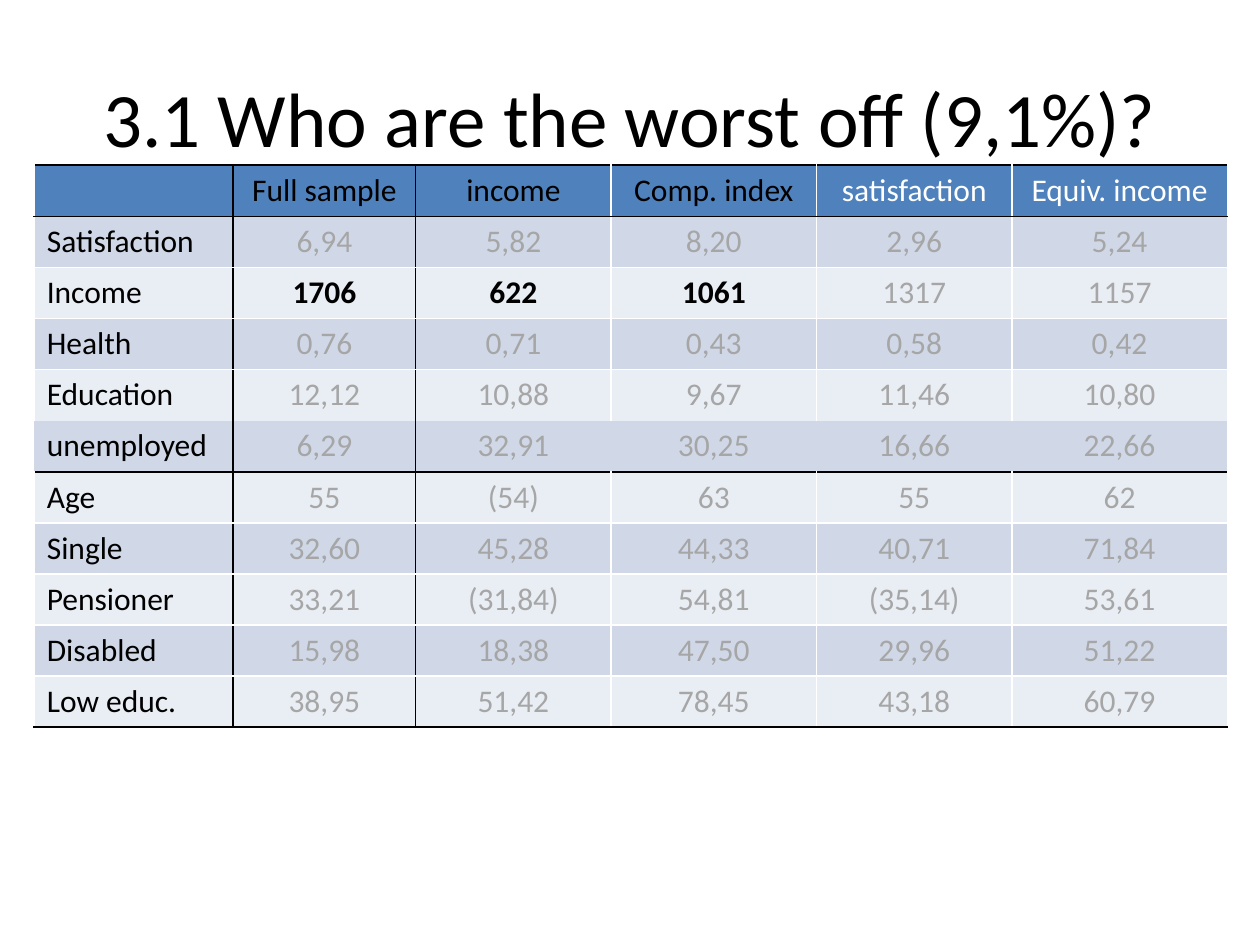
from lxml import etree
from pptx import Presentation
from pptx import util as u
from pptx.dml.color import RGBColor
from pptx.enum import text
from pptx.oxml.ns import qn


class Theme:
    font = "Calibri"
    title_size, cell_size, line_width = u.Pt(44), u.Pt(18), u.Pt(1)
    black, white, muted = "000000", "FFFFFF", "A6A6A6"
    header, bands = "4F81BD", ("E9EDF4", "D0D8E8")


def format_text(p, size, color, align, bold=False):
    p.alignment = align
    for r in p.runs:
        r.font.name, r.font.size, r.font.bold = Theme.font, size, bold
        r.font.color.rgb = RGBColor.from_string(color)


def add_border(cell, side, color):
    ln = etree.SubElement(cell._tc.get_or_add_tcPr(), qn(f"a:ln{side}"), w=str(Theme.line_width))
    if color is None:
        etree.SubElement(ln, qn("a:noFill"))
    else:
        fill = etree.SubElement(ln, qn("a:solidFill"))
        etree.SubElement(fill, qn("a:srgbClr"), val=color)


rows = [
    ("", "Full sample", "income", "Comp. index", "satisfaction", "Equiv. income"),
    ("Satisfaction", "6,94", "5,82", "8,20", "2,96", "5,24"),
    ("Income", "1706", "622", "1061", "1317", "1157"),
    ("Health", "0,76", "0,71", "0,43", "0,58", "0,42"),
    ("Education", "12,12", "10,88", "9,67", "11,46", "10,80"),
    ("unemployed", "6,29", "32,91", "30,25", "16,66", "22,66"),
    ("Age", "55", "(54)", "63", "55", "62"),
    ("Single", "32,60", "45,28", "44,33", "40,71", "71,84"),
    ("Pensioner", "33,21", "(31,84)", "54,81", "(35,14)", "53,61"),
    ("Disabled", "15,98", "18,38", "47,50", "29,96", "51,22"),
    ("Low educ.", "38,95", "51,42", "78,45", "43,18", "60,79"),
]
col_widths = [4.01, 3.68, 3.94, 4.14, 3.94, 4.34]
row_height = 1.03
unemployed_row = 5
row_edges = {0: Theme.black, 1: Theme.black, 5: None, 6: Theme.black, 11: Theme.black}
col_edges = {1: Theme.black, 2: Theme.black}
highlights = {(2, 1), (2, 2), (2, 3)}

prs = Presentation()
prs.slide_width, prs.slide_height = u.Cm(25.4), u.Cm(19.05)
s = prs.slides.add_slide(prs.slide_layouts[6])

title = s.shapes.add_textbox(u.Cm(1.27), u.Cm(0.76), u.Cm(22.86), u.Cm(3.18))
tf = title.text_frame
tf.word_wrap = True
tf.vertical_anchor = text.MSO_ANCHOR.MIDDLE
tf.text = "3.1 Who are the worst off (9,1%)?"
format_text(tf.paragraphs[0], Theme.title_size, Theme.black, text.PP_ALIGN.CENTER)

table = s.shapes.add_table(
    len(rows), len(col_widths), u.Cm(0.69), u.Cm(3.33),
    u.Cm(sum(col_widths)), u.Cm(row_height * len(rows)),
).table
for column, width in zip(table.columns, col_widths):
    column.width = u.Cm(width)

for i, values in enumerate(rows):
    table.rows[i].height = u.Cm(row_height)
    inner = None if i == unemployed_row else Theme.white
    for j, value in enumerate(values):
        cell = table.cell(i, j)
        add_border(cell, "L", col_edges.get(j, inner))
        add_border(cell, "R", col_edges.get(j + 1, inner))
        add_border(cell, "T", row_edges.get(i, Theme.white))
        add_border(cell, "B", row_edges.get(i + 1, Theme.white))
        cell.fill.solid()
        cell.fill.fore_color.rgb = RGBColor.from_string(Theme.bands[i % 2] if i else Theme.header)

        bold = (i, j) in highlights
        if i == 0:
            color = Theme.white if j > 3 else Theme.black
        else:
            color = Theme.black if j == 0 or bold else Theme.muted
        align = text.PP_ALIGN.CENTER if j else text.PP_ALIGN.LEFT
        cell.text_frame.text = value
        format_text(cell.text_frame.paragraphs[0], Theme.cell_size, color, align, bold)

prs.save("out.pptx")
